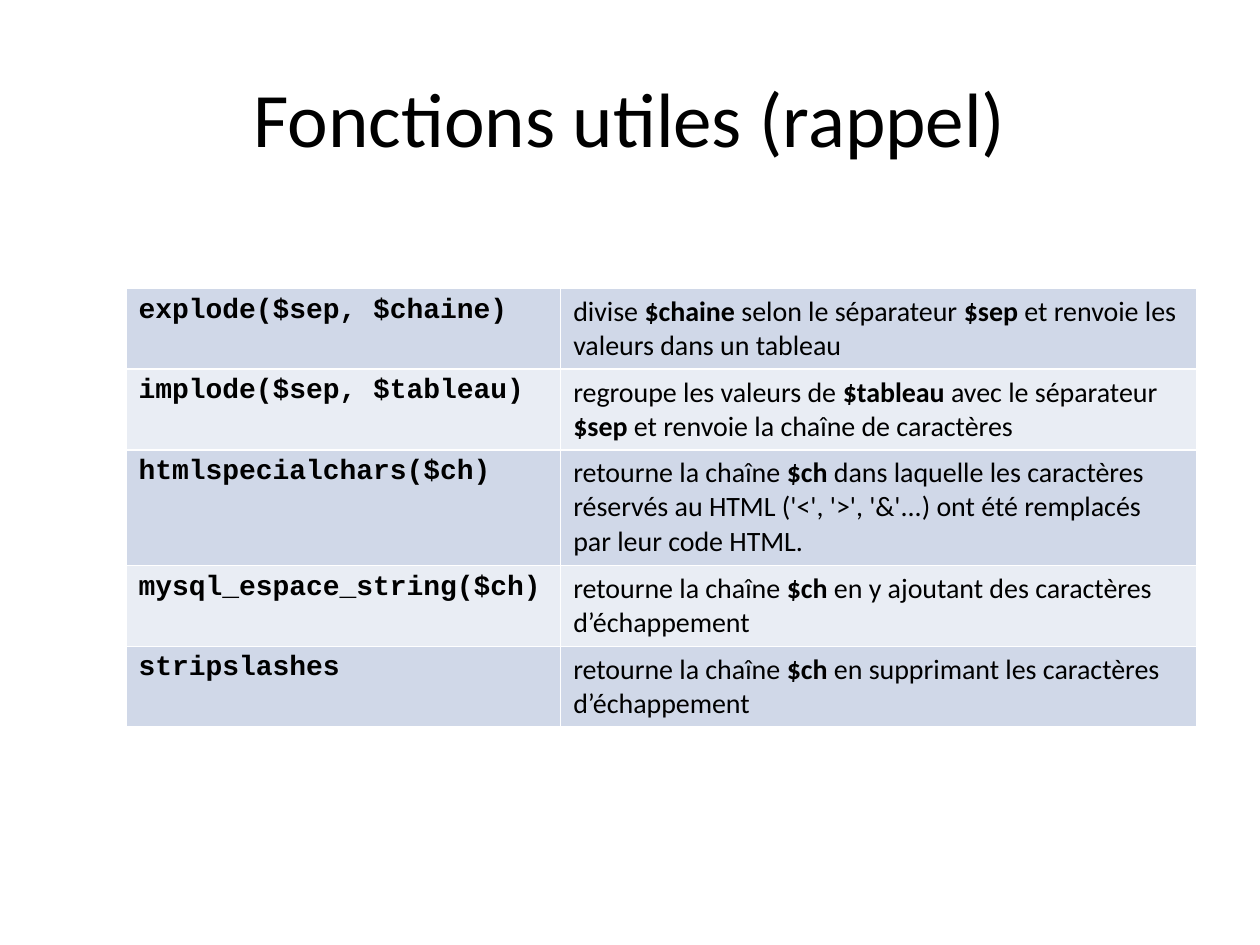
from lxml import etree
from pptx import Presentation
from pptx.dml.color import RGBColor
from pptx.enum.text import MSO_ANCHOR, PP_ALIGN
from pptx.oxml.ns import qn
from pptx.util import Inches, Pt

MIDDLE = MSO_ANCHOR.MIDDLE
LEFT, CENTER = PP_ALIGN.LEFT, PP_ALIGN.CENTER
BLACK = RGBColor(0x00, 0x00, 0x00)
WHITE = RGBColor(0xFF, 0xFF, 0xFF)
BAND_COLORS = [RGBColor(0xD0, 0xD8, 0xE8), RGBColor(0xE9, 0xED, 0xF4)]

FUNCTIONS = [
    ("explode($sep, $chaine)",
     "divise **$chaine** selon le séparateur **$sep** et renvoie les valeurs dans un tableau"),
    ("implode($sep, $tableau)",
     "regroupe les valeurs de **$tableau** avec le séparateur **$sep** "
     "et renvoie la chaîne de caractères"),
    ("htmlspecialchars($ch)",
     "retourne la chaîne **$ch** dans laquelle les caractères réservés au HTML "
     "('<', '>', '&'...) ont été remplacés par leur code HTML."),
    ("mysql_espace_string($ch)",
     "retourne la chaîne **$ch** en y ajoutant des caractères d’échappement"),
    ("stripslashes",
     "retourne la chaîne **$ch** en supprimant les caractères d’échappement"),
]
COLUMN_WIDTHS = [3.45, 5.05]
ROW_HEIGHTS = [0.64, 0.64, 0.92, 0.64, 0.64]


def write_text(text_frame, text, size=16, font="Calibri", align=LEFT):
    """Write one paragraph; parts between ** marks are bold."""
    paragraph = text_frame.paragraphs[0]
    paragraph.alignment = align
    for index, part in enumerate(text.split("**")):
        if part:
            run = paragraph.add_run()
            run.text = part
            run.font.name = font
            run.font.size = Pt(size)
            run.font.bold = index % 2 == 1
            run.font.color.rgb = BLACK


def format_cell(cell, fill_color):
    """Give the cell white borders, then its fill."""
    properties = cell._tc.get_or_add_tcPr()
    for side in ("a:lnL", "a:lnR", "a:lnT", "a:lnB"):
        line = etree.SubElement(properties, qn(side), w=str(Pt(1)))
        solid_fill = etree.SubElement(line, qn("a:solidFill"))
        etree.SubElement(solid_fill, qn("a:srgbClr"), val=str(WHITE))
    cell.fill.solid()
    cell.fill.fore_color.rgb = fill_color


presentation = Presentation()
presentation.slide_width = Inches(10)
presentation.slide_height = Inches(7.5)
slide = presentation.slides.add_slide(presentation.slide_layouts[6])

# Title
title = slide.shapes.add_textbox(Inches(0.5), Inches(0.3), Inches(9), Inches(1.25))
title.text_frame.word_wrap = True
title.text_frame.vertical_anchor = MIDDLE
write_text(title.text_frame, "Fonctions utiles (rappel)", size=44, align=CENTER)

# Table of functions
table = slide.shapes.add_table(
    len(FUNCTIONS), len(COLUMN_WIDTHS), Inches(1), Inches(2.29),
    Inches(sum(COLUMN_WIDTHS)), Inches(sum(ROW_HEIGHTS))).table
table.first_row = False
table.horz_banding = False
for column, width in zip(table.columns, COLUMN_WIDTHS):
    column.width = Inches(width)

for row_index, (signature, description) in enumerate(FUNCTIONS):
    row = table.rows[row_index]
    row.height = Inches(ROW_HEIGHTS[row_index])
    for cell in row.cells:
        format_cell(cell, BAND_COLORS[row_index % 2])
    signature_cell, description_cell = row.cells
    write_text(signature_cell.text_frame, f"**{signature}**", font="Courier New")
    write_text(description_cell.text_frame, description)

presentation.save("out.pptx")
